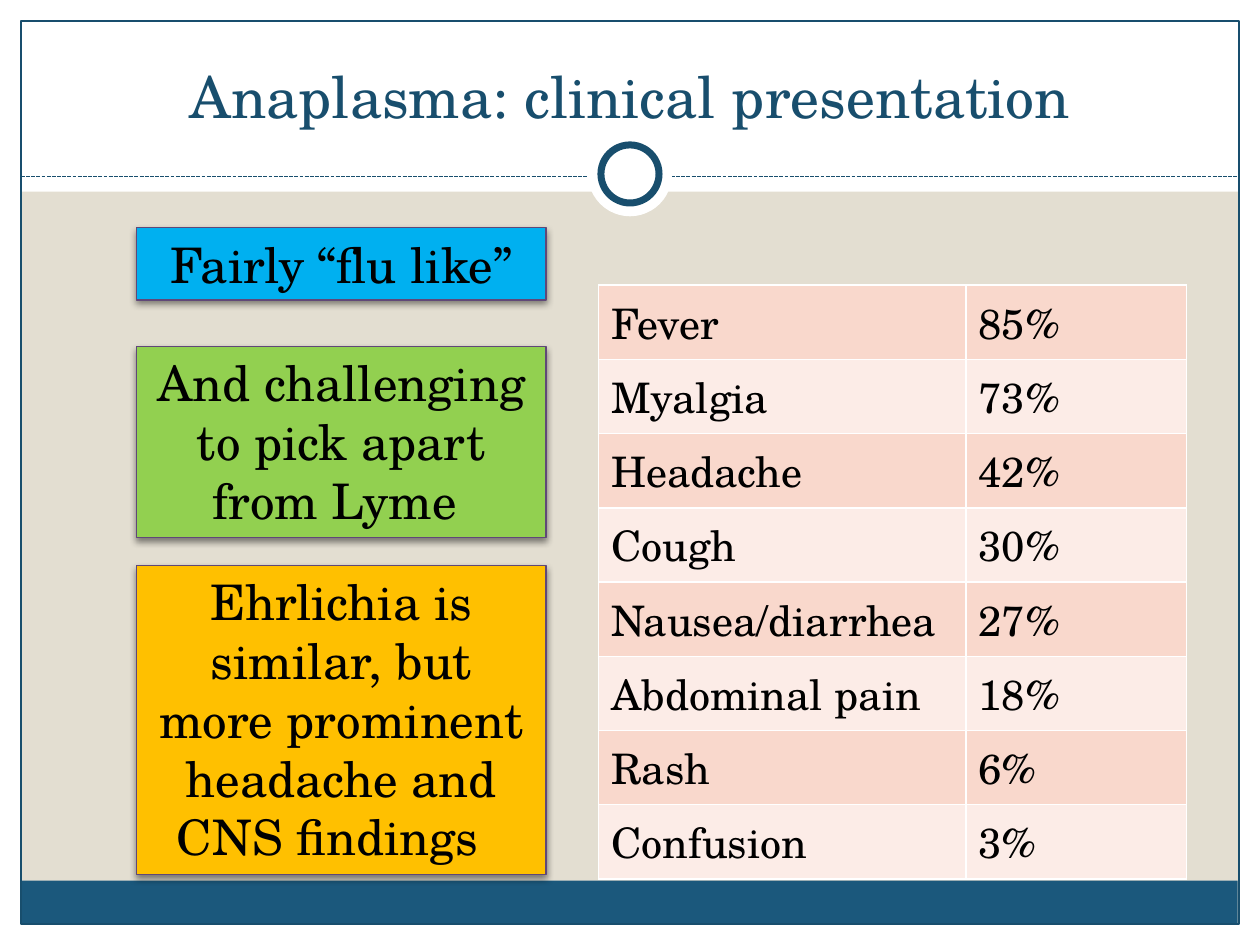
from dataclasses import dataclass
from typing import Optional

from lxml import etree
from pptx import Presentation
from pptx.dml.color import RGBColor
from pptx.enum import dml, shapes, text
from pptx.oxml import ns
from pptx.util import Pt


@dataclass(frozen=True)
class Theme:
    font: str = "TeX Gyre Schola"
    sand: str = "E3DED1"
    white: str = "FFFFFF"
    black: str = "000000"
    navy: str = "184E6D"
    footer: str = "1B587C"
    purple: str = "604878"
    bands: tuple = ("F9D8CC", "FCECE7")
    title_size: float = 33
    note_size: float = 28
    table_size: float = 24
    thin: float = 0.75
    ring: float = 4


@dataclass(frozen=True)
class Panel:
    left: float
    top: float
    width: float
    height: float
    fill: Optional[str] = None
    line: Optional[str] = None
    weight: float = 0.75
    kind: shapes.MSO_SHAPE = shapes.MSO_SHAPE.RECTANGLE


@dataclass(frozen=True)
class Note:
    top: float
    height: float
    fill: str
    words: str


THEME = Theme()
WIDTH, HEIGHT, MARGIN = 720, 540, 12
RULE_Y = 100.8
ELLIPSE = shapes.MSO_SHAPE.OVAL

FRAME = [
    Panel(0, 528, WIDTH, MARGIN, THEME.white),
    Panel(0, 0, WIDTH, 109.5, THEME.white),
    Panel(0, 0, MARGIN, HEIGHT, THEME.white),
    Panel(WIDTH - MARGIN, 0, MARGIN, HEIGHT, THEME.white),
    Panel(11.75, 503.2, 695.5, 24.5, THEME.footer),
    Panel(MARGIN, MARGIN, WIDTH - 2 * MARGIN, 516, None, THEME.navy, THEME.thin),
]
MEDALLION = [
    Panel(336, 75.6, 48, 48, THEME.white, kind=ELLIPSE),
    Panel(343.4, 82.8, 33.2, 33.2, THEME.white, THEME.navy, THEME.ring, ELLIPSE),
]
NOTES = [
    Note(130.2, 41.2, "00B0F0", "Fairly “flu like”"),
    Note(323.1, 176.8, "FFC000",
         "Ehrlichia is similar, but more prominent headache and CNS findings  "),
    Note(198, 109, "92D050", "And challenging to pick apart from Lyme "),
]
SYMPTOMS = [
    ("Fever", "85%"), ("Myalgia", "73%"), ("Headache", "42%"), ("Cough", "30%"),
    ("Nausea/diarrhea", "27%"), ("Abdominal pain", "18%"), ("Rash", "6%"),
    ("Confusion", "3%"),
]


def rgb(value: str) -> RGBColor:
    return RGBColor.from_string(value)


def add_element(parent, tag: str, **attributes):
    return etree.SubElement(parent, ns.qn(tag), attributes)


def write(frame, words: str, size: float, color: str, align=None) -> None:
    paragraph = frame.paragraphs[0]
    paragraph.alignment = align
    run = paragraph.add_run()
    run.text = words
    run.font.name = THEME.font
    run.font.size = Pt(size)
    run.font.color.rgb = rgb(color)


def draw_panel(slide, panel: Panel):
    drawn = slide.shapes.add_shape(panel.kind, Pt(panel.left), Pt(panel.top),
                                   Pt(panel.width), Pt(panel.height))
    drawn.shadow.inherit = False
    if panel.fill:
        drawn.fill.solid()
        drawn.fill.fore_color.rgb = rgb(panel.fill)
    else:
        drawn.fill.background()
    if panel.line:
        drawn.line.color.rgb = rgb(panel.line)
        drawn.line.width = Pt(panel.weight)
    else:
        drawn.line.fill.background()
    return drawn


def draw_rule(slide) -> None:
    rule = slide.shapes.add_connector(shapes.MSO_CONNECTOR.STRAIGHT, Pt(MARGIN),
                                      Pt(RULE_Y), Pt(WIDTH - MARGIN), Pt(RULE_Y))
    rule.line.color.rgb = rgb(THEME.navy)
    rule.line.width = Pt(THEME.thin)
    rule.line.dash_style = dml.MSO_LINE.SQUARE_DOT
    add_element(rule._element.spPr, "a:effectLst")


def draw_title(slide, words: str) -> None:
    title = slide.shapes.add_textbox(Pt(24), Pt(18), Pt(672), Pt(60)).text_frame
    title.word_wrap = True
    title.vertical_anchor = text.MSO_ANCHOR.BOTTOM
    write(title, words, THEME.title_size, THEME.navy, text.PP_ALIGN.CENTER)


def draw_note(slide, note: Note) -> None:
    box = draw_panel(slide, Panel(78, note.top, 234, note.height, note.fill,
                                  THEME.purple, THEME.thin))
    effects = box._element.spPr.find(ns.qn("a:effectLst"))
    shadow = add_element(effects, "a:outerShdw", blurRad=str(Pt(4)), dist=str(Pt(2)),
                         dir="5400000", rotWithShape="0")
    shade = add_element(shadow, "a:srgbClr", val=THEME.black)
    add_element(shade, "a:alpha", val="45000")
    box.text_frame.word_wrap = True
    box.text_frame.auto_size = text.MSO_AUTO_SIZE.SHAPE_TO_FIT_TEXT
    box.text_frame.vertical_anchor = text.MSO_ANCHOR.TOP
    write(box.text_frame, note.words, THEME.note_size, THEME.black,
          text.PP_ALIGN.CENTER)


def style_cell(cell, fill: str) -> None:
    properties = cell._tc.get_or_add_tcPr()
    for side in ("a:lnL", "a:lnR", "a:lnT", "a:lnB"):
        border = add_element(properties, side, w=str(Pt(1)))
        paint = add_element(border, "a:solidFill")
        add_element(paint, "a:srgbClr", val=THEME.white)
    cell.fill.solid()
    cell.fill.fore_color.rgb = rgb(fill)


def draw_symptoms(slide) -> None:
    row_height, widths = 42.43, (210, 126)
    table = slide.shapes.add_table(len(SYMPTOMS), len(widths), Pt(342), Pt(163),
                                   Pt(sum(widths)),
                                   Pt(row_height * len(SYMPTOMS))).table
    table.first_row = False
    for column, width in zip(table.columns, widths):
        column.width = Pt(width)
    for index, symptom in enumerate(SYMPTOMS):
        table.rows[index].height = Pt(row_height)
        for cell, words in zip(table.rows[index].cells, symptom):
            style_cell(cell, THEME.bands[index % 2])
            write(cell.text_frame, words, THEME.table_size, THEME.black)


def main() -> None:
    deck = Presentation()
    deck.slide_width, deck.slide_height = Pt(WIDTH), Pt(HEIGHT)
    slide = deck.slides.add_slide(deck.slide_layouts[6])
    slide.background.fill.solid()
    slide.background.fill.fore_color.rgb = rgb(THEME.sand)

    # Frame, header rule and ring
    for panel in FRAME:
        draw_panel(slide, panel)
    draw_rule(slide)
    for panel in MEDALLION:
        draw_panel(slide, panel)

    # Content
    draw_title(slide, "Anaplasma: clinical presentation")
    draw_symptoms(slide)
    for note in NOTES:
        draw_note(slide, note)

    deck.save("out.pptx")


if __name__ == "__main__":
    main()
